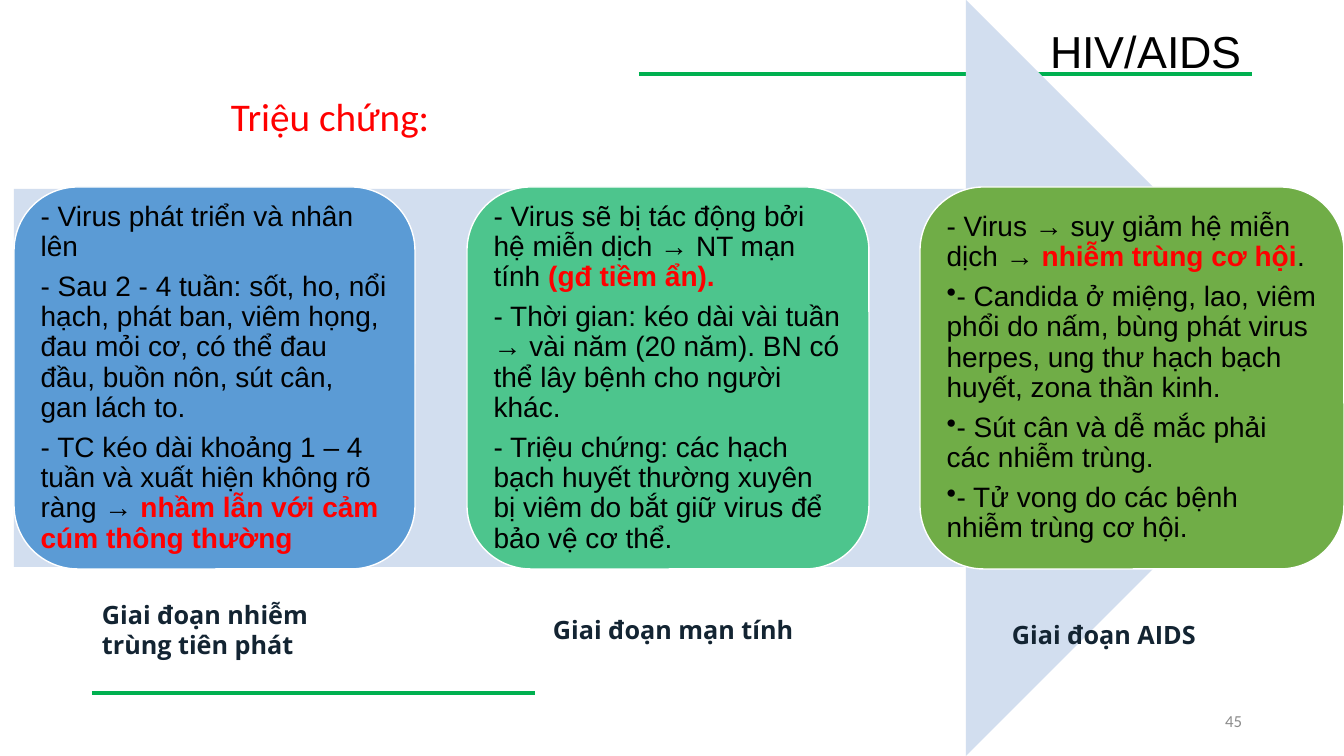
from lxml import etree
from pptx import Presentation
from pptx.dml.color import RGBColor
from pptx.enum.shapes import MSO_CONNECTOR, MSO_SHAPE
from pptx.enum.text import MSO_ANCHOR, PP_ALIGN
from pptx.oxml.ns import qn
from pptx.util import Pt

STRAIGHT = MSO_CONNECTOR.STRAIGHT
ARROW, ROUNDED = MSO_SHAPE.RIGHT_ARROW, MSO_SHAPE.ROUNDED_RECTANGLE
TOP, MIDDLE = MSO_ANCHOR.TOP, MSO_ANCHOR.MIDDLE
LEFT, RIGHT = PP_ALIGN.LEFT, PP_ALIGN.RIGHT

SLIDE_W, SLIDE_H = 1344, 756
SCALE = 12192000 / SLIDE_W
COLORS = {
    "rule": "00B050", "arrow": "D2DEEF", "outline": "FFFFFF",
    "primary": "5B9BD5", "chronic": "4DC58D", "aids": "70AD47",
    "text": "000000", "alert": "FF0000", "stage": "132432", "number": "8C8C8C",
}


def px(*lengths):
    """Turn px lengths into a list of EMU lengths."""
    return [round(length * SCALE) for length in lengths]


def add_run(paragraph, text, font, size, color, bold=False):
    run = paragraph.add_run()
    run.text = text
    for name, value in {"name": font, "size": Pt(size), "bold": bold}.items():
        setattr(run.font, name, value)
    run.font.color.rgb = RGBColor.from_string(COLORS[color])


prs = Presentation()
prs.slide_width, prs.slide_height = px(SLIDE_W, SLIDE_H)
slide = prs.slides.add_slide(prs.slide_layouts[6])
shapes = slide.shapes

# Green rules
for start, end, y in [(639, 1252, 74), (92, 535, 693)]:
    rule = shapes.add_connector(STRAIGHT, *px(start, y, end, y))
    rule.line.color.rgb = RGBColor.from_string(COLORS["rule"])
    rule.line.width = Pt(3)
    etree.SubElement(rule._element.spPr, qn("a:effectLst"))

# Arrow behind the stages
arrow = shapes.add_shape(ARROW, *px(14, 0, SLIDE_W - 14, SLIDE_H))
arrow.shadow.inherit = False
arrow.fill.solid()
arrow.fill.fore_color.rgb = RGBColor.from_string(COLORS["arrow"])
arrow.line.fill.background()

# Stage cards: left, width, fill, paragraphs of (bulleted, [(text, highlighted)])
cards = [
    (14, 401, "primary", [
        (False, [("- Virus phát triển và nhân lên", False)]),
        (False, [("- Sau 2 - 4 tuần: sốt, ho, nổi hạch, phát ban, viêm họng, đau mỏi cơ, "
                  "có thể đau đầu, buồn nôn, sút cân, gan lách to.", False)]),
        (False, [("- TC kéo dài khoảng 1 – 4 tuần và xuất hiện không rõ ràng → ", False),
                 ("nhầm lẫn với cảm cúm thông thường", True)]),
    ]),
    (467, 402, "chronic", [
        (False, [("- Virus sẽ bị tác động bởi hệ miễn dịch → NT mạn tính ", False),
                 ("(gđ tiềm ẩn).", True)]),
        (False, [("- Thời gian: kéo dài vài tuần → vài năm (20 năm). "
                  "BN có thể lây bệnh cho người khác.", False)]),
        (False, [("- Triệu chứng: các hạch bạch huyết thường xuyên bị viêm "
                  "do bắt giữ virus để bảo vệ cơ thể.", False)]),
    ]),
    (920, 424, "aids", [
        (False, [("- Virus → suy giảm hệ miễn dịch → ", False),
                 ("nhiễm trùng cơ hội", True), (".", False)]),
        (True, [("- Candida ở miệng, lao, viêm phổi do nấm, bùng phát virus herpes, "
                 "ung thư hạch bạch huyết, zona thần kinh.", False)]),
        (True, [("- Sút cân và dễ mắc phải các nhiễm trùng.", False)]),
        (True, [("- Tử vong do các bệnh nhiễm trùng cơ hội.", False)]),
    ]),
]
for left, width, fill, symptoms in cards:
    card = shapes.add_shape(ROUNDED, *px(left, 187, width, 382))
    card.shadow.inherit = False
    card.fill.solid()
    card.fill.fore_color.rgb = RGBColor.from_string(COLORS[fill])
    card.line.color.rgb = RGBColor.from_string(COLORS["outline"])
    card.line.width = Pt(1)
    frame = card.text_frame
    frame.word_wrap = True
    frame.vertical_anchor = MIDDLE
    for side in ("left", "right", "top", "bottom"):
        setattr(frame, f"margin_{side}", px(8)[0])
    for index, (bulleted, runs) in enumerate(symptoms):
        paragraph = frame.add_paragraph() if index else frame.paragraphs[0]
        paragraph.alignment = LEFT
        paragraph.line_spacing = 0.9
        paragraph.space_after = Pt(7)
        if bulleted:
            etree.SubElement(paragraph._p.get_or_add_pPr(), qn("a:buChar"), char="•")
        for text, highlighted in runs:
            add_run(paragraph, text, "Arial", 20, "alert" if highlighted else "text", highlighted)

# Title, heading, stage names and slide number
stage_style = ("Open Sans", 18, "stage", True)
labels = [
    ("HIV/AIDS", (92, 25, 1160, 145), TOP, RIGHT, 0.9, ("Arial", 32, "text")),
    ("Triệu chứng:", (221, 93, 332, 94), TOP, LEFT, 0.9, ("Calibri", 28, "alert")),
    ("Giai đoạn nhiễm trùng tiên phát", (92, 578, 273, 103), MIDDLE, LEFT, 1.0, stage_style),
    ("Giai đoạn mạn tính", (543, 578, 265, 103), MIDDLE, LEFT, 1.0, stage_style),
    ("Giai đoạn AIDS", (1002, 583, 217, 103), MIDDLE, LEFT, 1.0, stage_style),
    ("45", (950, 701, 302, 40), MIDDLE, RIGHT, 1.0, ("Calibri", 12, "number")),
]
for text, box, anchor, alignment, spacing, style in labels:
    frame = shapes.add_textbox(*px(*box)).text_frame
    frame.word_wrap = True
    frame.vertical_anchor = anchor
    paragraph = frame.paragraphs[0]
    paragraph.alignment = alignment
    paragraph.line_spacing = spacing
    add_run(paragraph, text, *style)

prs.save("out.pptx")
